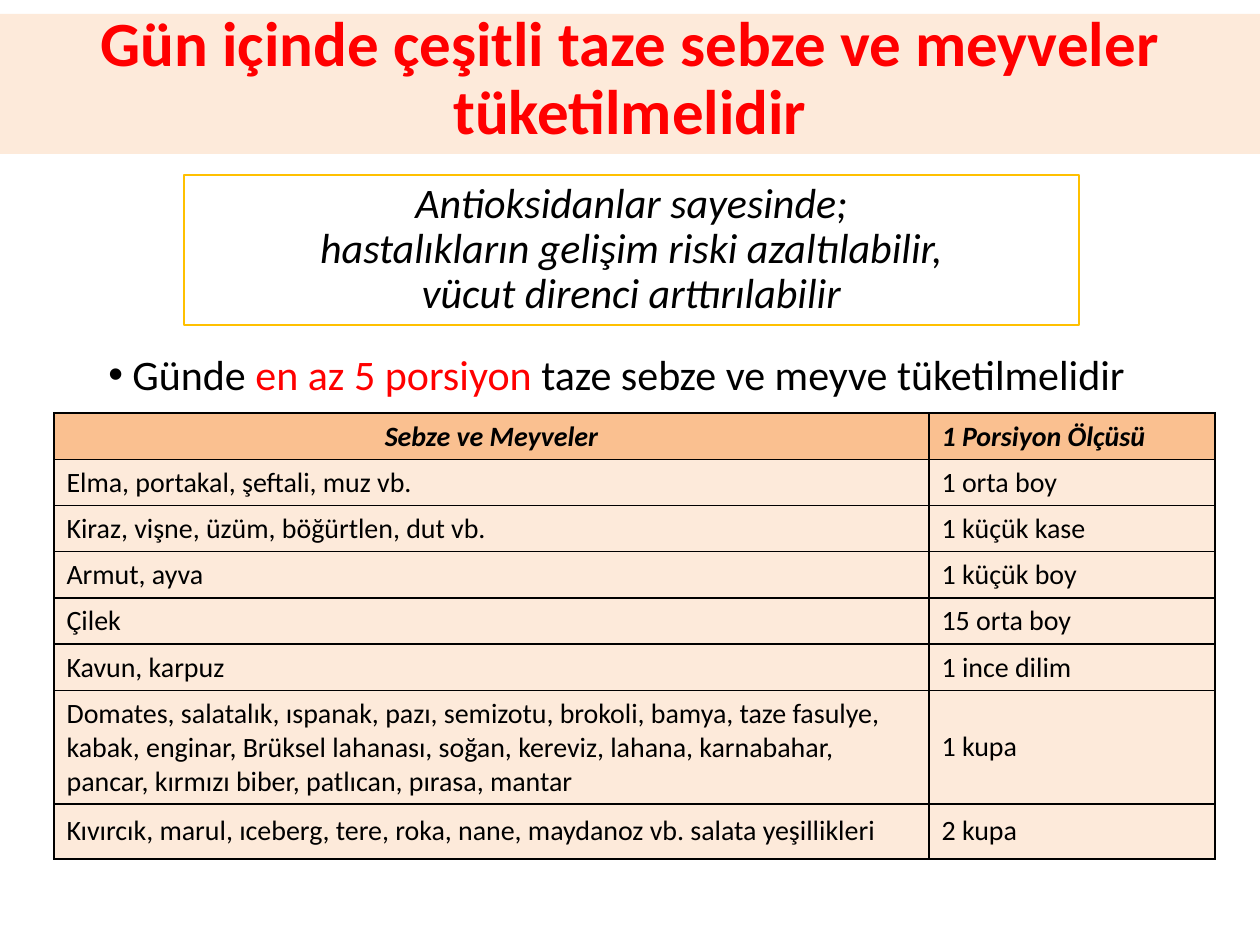
from dataclasses import dataclass

from lxml.etree import SubElement
from pptx import Presentation
from pptx.dml.color import RGBColor
from pptx.enum.shapes import MSO_SHAPE
from pptx.enum.text import MSO_ANCHOR as Anchor, PP_ALIGN as Align
from pptx.oxml.ns import qn
from pptx.util import Emu, Pt

TITLE = "Gün içinde çeşitli taze sebze ve meyveler tüketilmelidir"
BENEFITS = [
    "Antioksidanlar sayesinde;",
    "hastalıkların gelişim riski azaltılabilir,",
    "vücut direnci arttırılabilir",
]
ADVICE = [
    ("Günde ", "text"),
    ("en az 5 porsiyon ", "accent"),
    ("taze sebze ve meyve tüketilmelidir", "text"),
]
PORTIONS = [
    ("Sebze ve Meyveler", "1 Porsiyon Ölçüsü"),
    ("Elma, portakal, şeftali, muz vb.", "1 orta boy"),
    ("Kiraz, vişne, üzüm, böğürtlen, dut vb.", "1 küçük kase"),
    ("Armut, ayva", "1 küçük boy"),
    ("Çilek", "15 orta boy"),
    ("Kavun, karpuz", "1 ince dilim"),
    ("Domates, salatalık, ıspanak, pazı, semizotu, brokoli, bamya, taze fasulye, "
     "kabak, enginar, Brüksel lahanası, soğan, kereviz, lahana, karnabahar, "
     "pancar, kırmızı biber, patlıcan, pırasa, mantar", "1 kupa"),
    ("Kıvırcık, marul, ıceberg, tere, roka, nane, maydanoz vb. salata yeşillikleri",
     "2 kupa"),
]
COLUMN_WIDTHS = [875, 286]
ROW_HEIGHTS = [42] * 6 + [101, 55]


@dataclass(frozen=True)
class Theme:
    font: str = "Calibri"
    text: str = "000000"
    accent: str = "FF0000"
    band: str = "FDEADA"
    header: str = "FAC090"
    frame: str = "FFC000"
    title_size: int = 36
    body_size: int = 24
    table_size: int = 16


THEME = Theme()


def px(count):
    return Emu(round(count * 914400 / 126))


def rgb(role):
    return RGBColor.from_string(getattr(THEME, role))


def style(paragraph, size, color="text", bold=False, italic=False):
    font = paragraph.font
    font.name, font.size = THEME.font, Pt(size)
    font.bold, font.italic = bold, italic
    font.color.rgb = rgb(color)


def add_panel(slide, left, top, width, height, lines, size, color="text",
              fill=None, line=None, **emphasis):
    shape = slide.shapes.add_shape(
        MSO_SHAPE.RECTANGLE, px(left), px(top), px(width), px(height))
    shape.shadow.inherit = False
    if fill:
        shape.fill.solid()
        shape.fill.fore_color.rgb = rgb(fill)
    else:
        shape.fill.background()
    if line:
        shape.line.color.rgb = rgb(line)
        shape.line.width = Pt(0.75)
    else:
        shape.line.fill.background()
    frame = shape.text_frame
    frame.word_wrap = True
    for index, text in enumerate(lines):
        paragraph = frame.add_paragraph() if index else frame.paragraphs[0]
        paragraph.text = text
        paragraph.alignment = Align.CENTER
        paragraph.line_spacing = 0.9
        style(paragraph, size, color, **emphasis)
    return frame


def add_advice(slide):
    frame = slide.shapes.add_textbox(px(96), px(348), px(1071), px(496)).text_frame
    frame.word_wrap = True
    paragraph = frame.paragraphs[0]
    paragraph.line_spacing = 0.9
    properties = paragraph._p.get_or_add_pPr()
    properties.set("marL", str(px(24)))
    properties.set("indent", str(px(-24)))
    SubElement(properties, qn("a:buFont"), typeface="Arial")
    SubElement(properties, qn("a:buChar"), char="•")
    style(paragraph, THEME.body_size)
    for text, color in ADVICE:
        run = paragraph.add_run()
        run.text = text
        run.font.color.rgb = rgb(color)


def add_borders(cell):
    properties = cell._tc.get_or_add_tcPr()
    for index, side in enumerate(("lnL", "lnR", "lnT", "lnB")):
        border = properties.makeelement(qn(f"a:{side}"), {"w": str(Pt(1))})
        fill = SubElement(border, qn("a:solidFill"))
        SubElement(fill, qn("a:srgbClr"), val=THEME.text)
        properties.insert(index, border)


def add_portions(slide):
    table = slide.shapes.add_table(
        len(PORTIONS), len(COLUMN_WIDTHS), px(54), px(413),
        px(sum(COLUMN_WIDTHS)), px(sum(ROW_HEIGHTS))).table
    for column, width in zip(table.columns, COLUMN_WIDTHS):
        column.width = px(width)
    for row, height in zip(table.rows, ROW_HEIGHTS):
        row.height = px(height)
    for row, texts in enumerate(PORTIONS):
        is_header = row == 0
        for column, text in enumerate(texts):
            cell = table.cell(row, column)
            cell.text = text
            cell.vertical_anchor = Anchor.MIDDLE
            cell.fill.solid()
            cell.fill.fore_color.rgb = rgb("header" if is_header else "band")
            paragraph = cell.text_frame.paragraphs[0]
            style(paragraph, THEME.table_size, bold=is_header, italic=is_header)
            add_borders(cell)
    table.cell(0, 0).text_frame.paragraphs[0].alignment = Align.CENTER


def main():
    presentation = Presentation()
    presentation.slide_width, presentation.slide_height = px(1260), px(945)
    slide = presentation.slides.add_slide(presentation.slide_layouts[6])
    title = add_panel(slide, 0, 14, 1260, 140, [TITLE], THEME.title_size,
                      color="accent", fill="band", bold=True)
    title.margin_bottom = px(13)
    add_advice(slide)
    add_panel(slide, 184, 175, 895, 150, BENEFITS, THEME.body_size,
              line="frame", italic=True)
    add_portions(slide)
    presentation.save("out.pptx")


if __name__ == "__main__":
    main()
